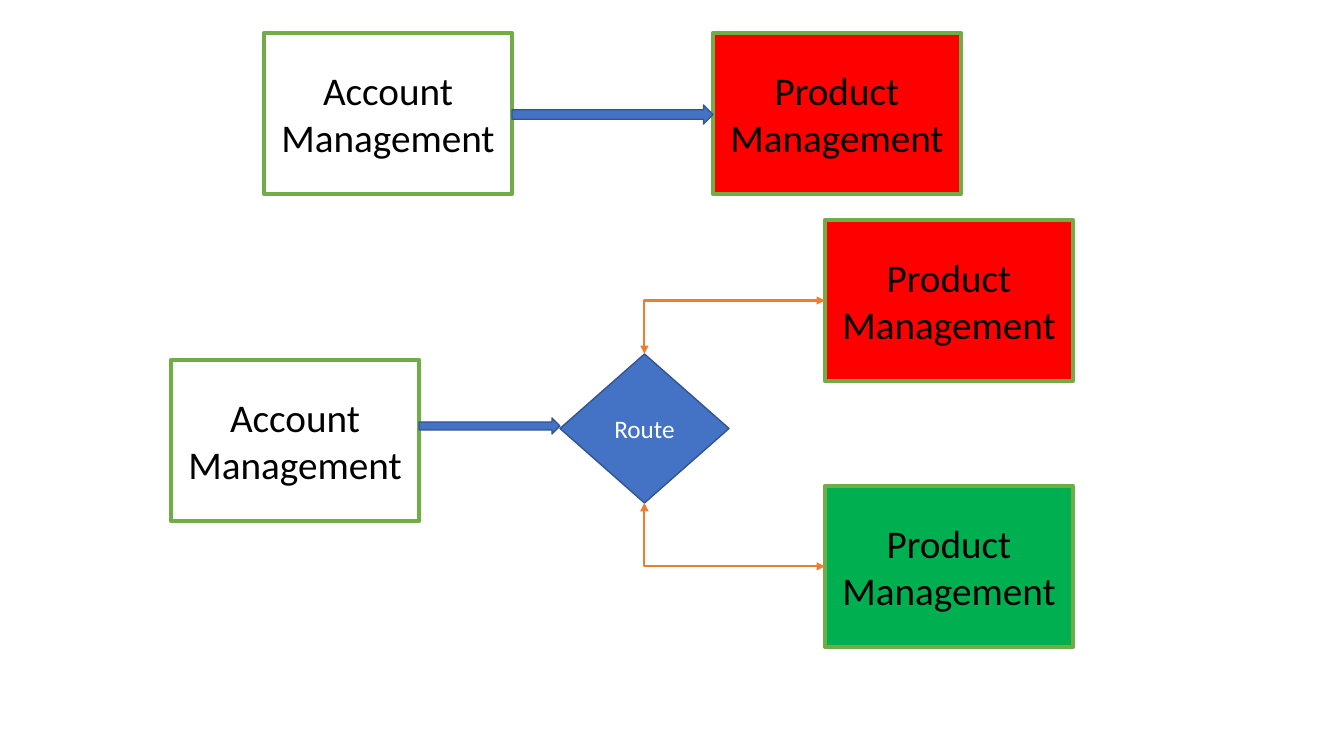
"""Build a slide comparing a direct link with a routed link between two services."""
from lxml import etree
from pptx import Presentation
from pptx import util as u
from pptx.dml.color import RGBColor
from pptx.enum import shapes, text
from pptx.oxml.ns import qn

WHITE = RGBColor(0xFF, 0xFF, 0xFF)
BLACK = RGBColor(0x00, 0x00, 0x00)
RED = RGBColor(0xFF, 0x00, 0x00)
GREEN = RGBColor(0x00, 0xB0, 0x50)
BORDER = RGBColor(0x70, 0xAD, 0x47)
BLUE = RGBColor(0x44, 0x72, 0xC4)
NAVY = RGBColor(0x32, 0x54, 0x91)
ORANGE = RGBColor(0xED, 0x7D, 0x31)

PX_PER_INCH = 100.8
SLIDE_W, SLIDE_H = 1344, 756
BOX_W, BOX_H = 248, 161
ROUTE = ("Route", 560, 354, 169, 149)
BOXES = {
    "direct product": ("Product Management", 713, 33, RED),
    "direct account": ("Account Management", 264, 33, WHITE),
    "red product": ("Product Management", 825, 220, RED),
    "routed account": ("Account Management", 171, 360, WHITE),
    "green product": ("Product Management", 825, 486, GREEN),
}
ARROWS = [
    ("direct account", "direct product", 105, 19),
    ("routed account", "route", 418, 16),
]
TOP, LEFT, BOTTOM = 0, 1, 2
LINKS = [("red product", TOP), ("green product", BOTTOM)]


def px(n):
    return u.Emu(round(n * u.Inches(1) / PX_PER_INCH))


def add_shape(s, kind, box, fill, line, width):
    sp = s.shapes.add_shape(kind, *box)
    sp.shadow.inherit = False
    sp.fill.solid()
    sp.fill.fore_color.rgb = fill
    sp.line.color.rgb = line
    sp.line.width = u.Pt(width)
    return sp


def set_text(sp, label, size, color):
    tf = sp.text_frame
    tf.word_wrap = True
    tf.vertical_anchor = text.MSO_ANCHOR.MIDDLE
    p = tf.paragraphs[0]
    p.text = label
    p.alignment = text.PP_ALIGN.CENTER
    p.font.name = "Calibri"
    p.font.size = u.Pt(size)
    p.font.color.rgb = color


def add_link(s, product, route, site):
    cx = s.shapes.add_connector(shapes.MSO_CONNECTOR.ELBOW, 0, 0, 0, 0)
    cx.begin_connect(product, LEFT)
    cx.end_connect(route, site)
    cx.line.color.rgb = ORANGE
    cx.line.width = u.Pt(1.5)
    sp_pr = cx._element.spPr
    sp_pr.find(qn("a:prstGeom")).set("prst", "bentConnector2")
    for end in ("a:headEnd", "a:tailEnd"):
        etree.SubElement(sp_pr.find(qn("a:ln")), qn(end), type="triangle")
    etree.SubElement(sp_pr, qn("a:effectLst"))


def main():
    prs = Presentation()
    prs.slide_width, prs.slide_height = px(SLIDE_W), px(SLIDE_H)
    s = prs.slides.add_slide(prs.slide_layouts[6])
    nodes = {}
    for name, (label, x, y, fill) in BOXES.items():
        box = map(px, (x, y, BOX_W, BOX_H))
        nodes[name] = add_shape(s, shapes.MSO_SHAPE.RECTANGLE, box, fill, BORDER, 3)
        set_text(nodes[name], label, 28, BLACK)
    label, *box = ROUTE
    nodes["route"] = add_shape(s, shapes.MSO_SHAPE.DIAMOND, map(px, box), BLUE, NAVY, 1)
    set_text(nodes["route"], label, 18, WHITE)
    for source, target, y, h in ARROWS:
        x = nodes[source].left + nodes[source].width
        box = (x, px(y), nodes[target].left - x, px(h))
        add_shape(s, shapes.MSO_SHAPE.RIGHT_ARROW, box, BLUE, NAVY, 1)
    for product, site in LINKS:
        add_link(s, nodes[product], nodes["route"], site)
    prs.save("out.pptx")


if __name__ == "__main__":
    main()
